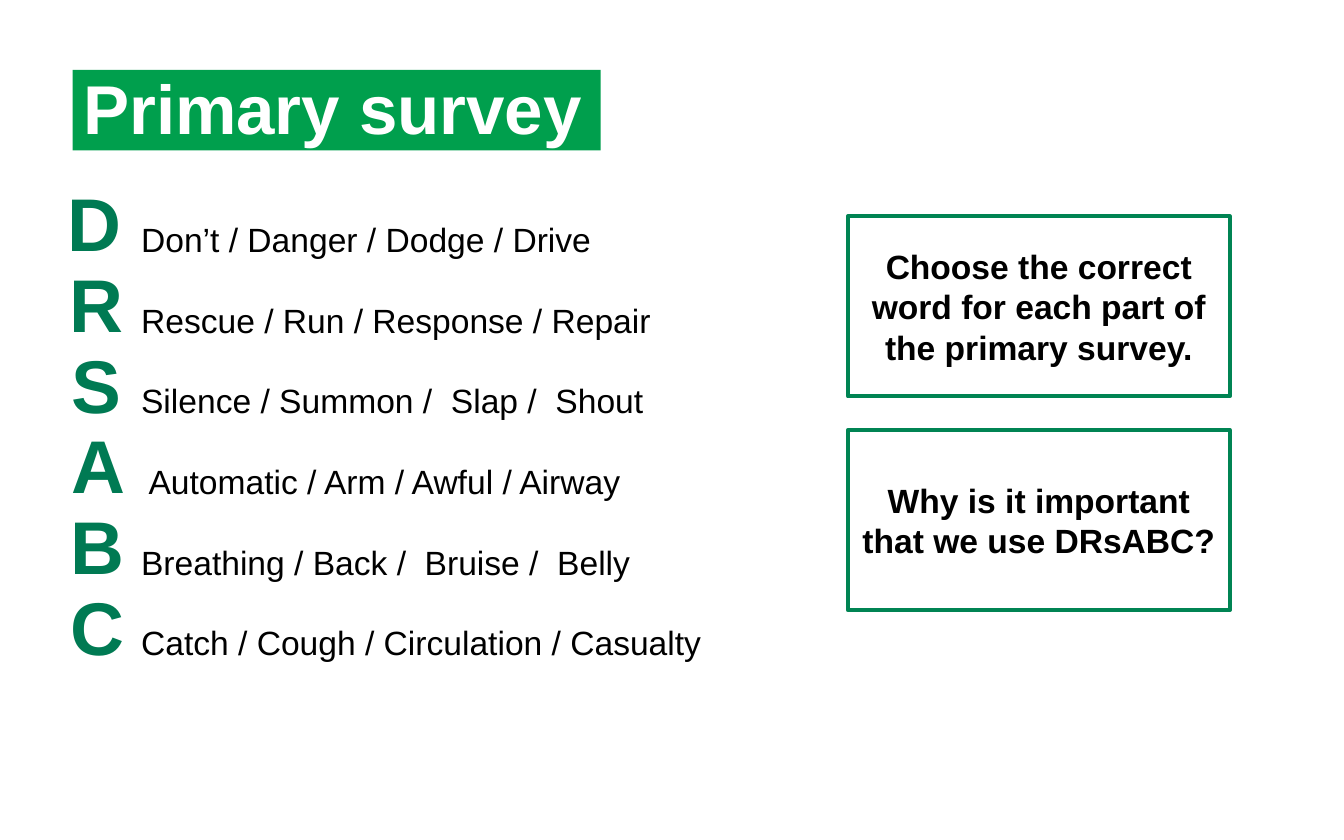
from dataclasses import dataclass

from pptx import Presentation
from pptx import util as u
from pptx.dml.color import RGBColor
from pptx.enum import shapes, text

PX = 9144  # EMU in one px, 100 px to the inch
FONT = "Arial"
STEP = 60  # distance between survey rows


@dataclass
class SurveyRow:
    letter: str
    left: int
    choices: str


@dataclass
class Prompt:
    top: int
    wording: str


ROWS = [
    SurveyRow("D", 40, "Don’t / Danger / Dodge / Drive"),
    SurveyRow("R", 41, "Rescue / Run / Response / Repair"),
    SurveyRow("S", 41, "Silence / Summon /  Slap /  Shout"),
    SurveyRow("A", 43, " Automatic / Arm / Awful / Airway"),
    SurveyRow("B", 42, "Breathing / Back /  Bruise /  Belly"),
    SurveyRow("C", 42, "Catch / Cough / Circulation / Casualty"),
]
PROMPTS = [
    Prompt(161, "Choose the correct word for each part of the primary survey."),
    Prompt(320, "Why is it important that we use DRsABC?"),
]


def px(*lengths: int) -> list[u.Emu]:
    return [u.Emu(length * PX) for length in lengths]


def color(hex_code: str) -> RGBColor:
    return RGBColor.from_string(hex_code)


def style(paragraph, size: int, hex_code: str, bold: bool = True) -> None:
    for run in paragraph.runs:
        run.font.name = FONT
        run.font.size = u.Pt(size)
        run.font.bold = bold
        run.font.color.rgb = color(hex_code)


def set_insets(frame, left: int, top: int, right: int, bottom: int) -> None:
    (frame.margin_left, frame.margin_top,
     frame.margin_right, frame.margin_bottom) = px(left, top, right, bottom)


def add_rectangle(slide, left: int, top: int, width: int, height: int):
    rectangle = slide.shapes.add_shape(
        shapes.MSO_SHAPE.RECTANGLE, *px(left, top, width, height))
    rectangle.shadow.inherit = False
    rectangle.text_frame.word_wrap = True
    return rectangle


def add_title(slide) -> None:
    title = add_rectangle(slide, 54, 52, 393, 60)
    title.fill.solid()
    title.fill.fore_color.rgb = color("009F4D")
    title.line.fill.background()
    frame = title.text_frame
    set_insets(frame, 8, 4, 8, 4)
    frame.vertical_anchor = text.MSO_ANCHOR.TOP
    frame.text = "Primary survey"
    heading = frame.paragraphs[0]
    heading.alignment = text.PP_ALIGN.LEFT
    heading.line_spacing = 0.9
    style(heading, 37, "FFFFFF")


def add_letter(slide, row: SurveyRow, top: int) -> None:
    frame = slide.shapes.add_textbox(*px(row.left, top, 61, 77)).text_frame
    frame.word_wrap = False
    frame.text = row.letter
    frame.paragraphs[0].alignment = text.PP_ALIGN.CENTER
    style(frame.paragraphs[0], 40, "007A53")


def add_prompt(slide, prompt: Prompt) -> None:
    box = add_rectangle(slide, 631, prompt.top, 284, 134)
    box.fill.background()
    box.line.color.rgb = color("008453")
    box.line.width = u.Pt(2.25)
    frame = box.text_frame
    frame.vertical_anchor = text.MSO_ANCHOR.MIDDLE
    frame.text = prompt.wording
    frame.paragraphs[0].alignment = text.PP_ALIGN.CENTER
    style(frame.paragraphs[0], 18, "000000")


def add_choices(slide, rows: list[SurveyRow]) -> None:
    frame = slide.shapes.add_textbox(*px(90, 158, 838, 380)).text_frame
    frame.word_wrap = True
    set_insets(frame, 15, 5, 8, 4)
    frame.text = "\n".join(row.choices for row in rows)
    line_height = u.Emu(STEP * PX // 2)
    for index, paragraph in enumerate(frame.paragraphs):
        paragraph.line_spacing = line_height
        if index:
            paragraph.space_before = line_height
        style(paragraph, 18, "000000", bold=False)


def main() -> None:
    prs = Presentation()
    prs.slide_width, prs.slide_height = px(1000, 625)
    slide = prs.slides.add_slide(prs.slide_layouts[6])

    # Title band
    add_title(slide)

    # Initials down the left side
    for index, row in enumerate(ROWS):
        add_letter(slide, row, 127 + index * STEP)

    # Framed prompts on the right
    for prompt in PROMPTS:
        add_prompt(slide, prompt)

    # Word choices beside the initials
    add_choices(slide, ROWS)

    prs.save("out.pptx")


if __name__ == "__main__":
    main()
